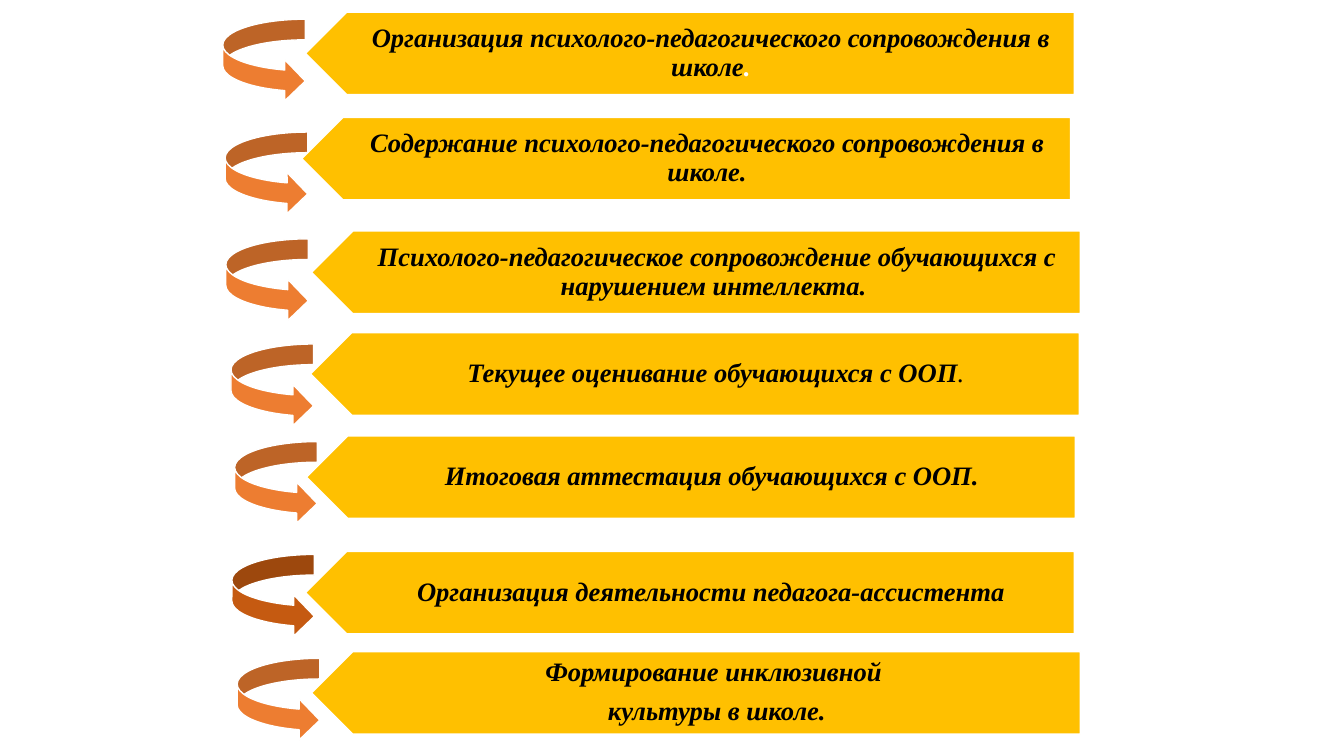
from pptx import Presentation
from pptx.dml.color import RGBColor
from pptx.enum import shapes, text
from pptx.util import Pt

AMBER = RGBColor(0xFF, 0xC0, 0x00)
ORANGE = RGBColor(0xED, 0x7D, 0x31)
DARK_ORANGE = RGBColor(0xC5, 0x5A, 0x11)
WHITE = RGBColor(0xFF, 0xFF, 0xFF)
BLACK = RGBColor(0, 0, 0)

PLAIN_DOT = {"bold": False}
WHITE_DOT = {"color": WHITE}

# topic paragraphs, closing dot style, banner (left, top), arrow (left, top), arrow colour
TOPICS = [
    (["Организация психолого-педагогического сопровождения в школе"], WHITE_DOT,
     (218.2, 8.6), (159.1, 13.7), ORANGE),
    (["Содержание психолого-педагогического сопровождения в школе."], None,
     (215.5, 83.8), (160.8, 94.3), ORANGE),
    (["Психолого-педагогическое сопровождение обучающихся с нарушением интеллекта. "], None,
     (222.5, 165), (161.3, 170.6), ORANGE),
    (["Текущее оценивание обучающихся с ООП"], PLAIN_DOT,
     (221.8, 237.6), (165, 245.7), ORANGE),
    (["Итоговая аттестация обучающихся с ООП."], None,
     (218.9, 311.3), (167.6, 315.4), ORANGE),
    (["Организация деятельности педагога-ассистента"], None,
     (218.2, 393.8), (165.6, 396), DARK_ORANGE),
    (["Формирование инклюзивной ", "культуры в школе."], None,
     (222.5, 465.4), (169.4, 470.2), ORANGE),
]

BANNER_WIDTH, ROW_HEIGHT = 549.2, 59
TIP_INSET = 14.7
FONT_SIZE = 19


def add_figure(slide, preset, corner, width, color):
    figure = slide.shapes.add_shape(
        preset, Pt(corner[0]), Pt(corner[1]), Pt(width), Pt(ROW_HEIGHT))
    figure.shadow.inherit = False
    figure.fill.solid()
    figure.fill.fore_color.rgb = color
    figure.line.color.rgb = WHITE
    figure.line.width = Pt(1)
    return figure


def style_run(run, color=BLACK, bold=True):
    run.font.name = "Times New Roman"
    run.font.size = Pt(FONT_SIZE)
    run.font.bold = bold
    run.font.italic = True
    run.font.color.rgb = color


def add_topic(slide, lines, dot, corner):
    left, top = corner
    label = slide.shapes.add_textbox(
        Pt(left + TIP_INSET), Pt(top), Pt(BANNER_WIDTH - TIP_INSET), Pt(ROW_HEIGHT))
    frame = label.text_frame
    frame.text = "\n".join(lines)
    frame.word_wrap = True
    frame.vertical_anchor = text.MSO_ANCHOR.MIDDLE
    frame.margin_left, frame.margin_right = Pt(26), Pt(10.8)
    frame.margin_top = frame.margin_bottom = Pt(5.7)
    for paragraph in frame.paragraphs:
        paragraph.alignment = text.PP_ALIGN.CENTER
        paragraph.line_spacing = 0.9
        paragraph.space_after = Pt(7.4)
        style_run(paragraph.runs[0])
    if dot:
        closing = frame.paragraphs[-1].add_run()
        closing.text = "."
        style_run(closing, **dot)


def main():
    deck = Presentation()
    deck.slide_width, deck.slide_height = Pt(960), Pt(540)
    slide = deck.slides.add_slide(deck.slide_layouts[6])
    for lines, dot, banner_corner, arrow_corner, arrow_color in TOPICS:
        banner = add_figure(
            slide, shapes.MSO_SHAPE.PENTAGON, banner_corner, BANNER_WIDTH, AMBER)
        banner.rotation = 180
        add_topic(slide, lines, dot, banner_corner)
        add_figure(slide, shapes.MSO_SHAPE.CURVED_RIGHT_ARROW,
                   arrow_corner, ROW_HEIGHT, arrow_color)
    deck.save("out.pptx")


if __name__ == "__main__":
    main()
